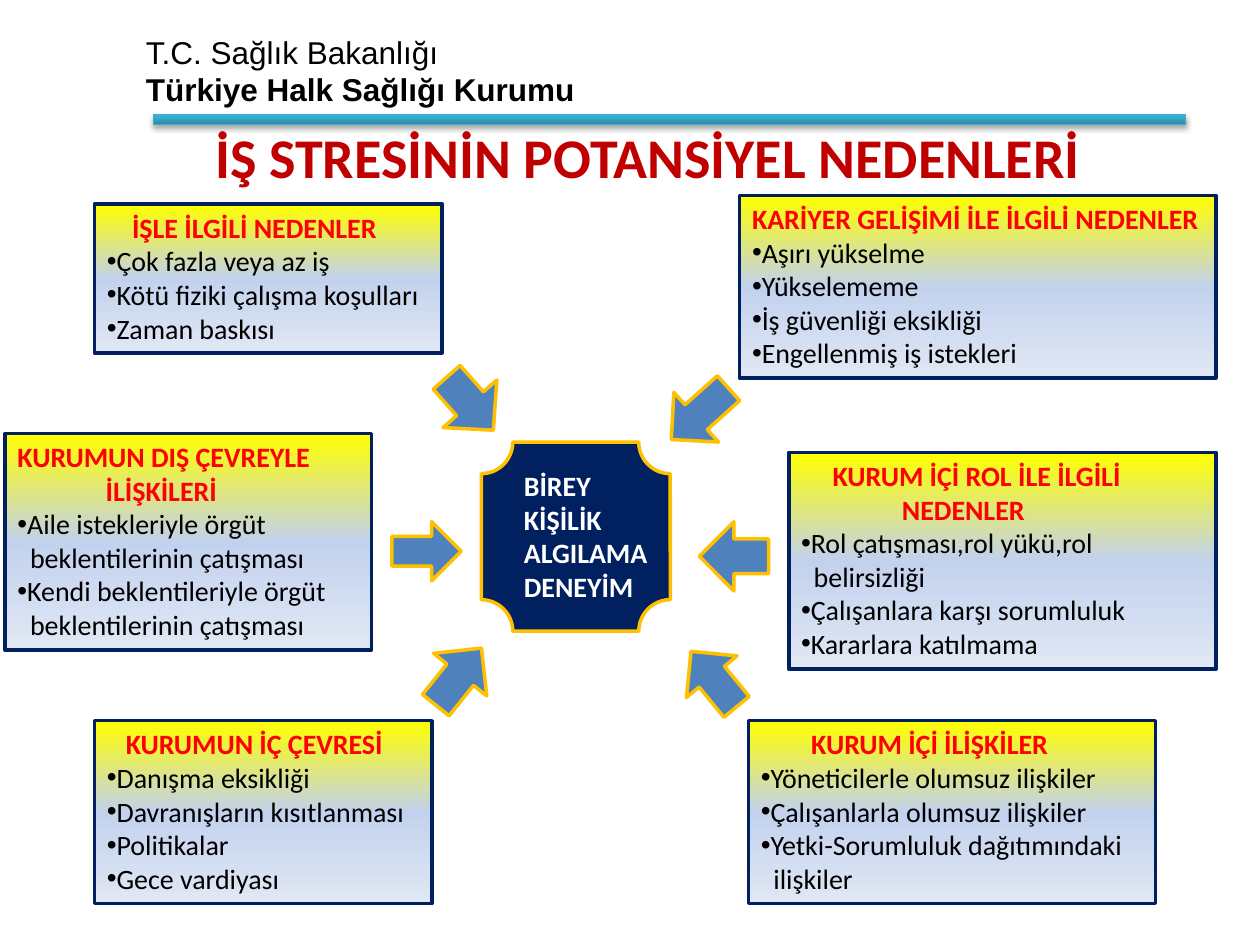
from lxml import etree
from pptx import Presentation
from pptx import util as u
from pptx.dml import color
from pptx.enum import shapes, text
from pptx.oxml import ns

NAVY, GOLD, RED, BLACK = "002060", "FFC000", "FF0000", "000000"
PANEL_STOPS = [(0, "FFFF00"), (50, "C2D1ED"), (100, "E1E8F5")]
BAR_STOPS = [(0, "2A88A2"), (80, "37B1D2"), (100, "34B4D6")]
LINE_HEIGHT, PADDING, SPACE = 0.27, 0.1, 0.05

# Each panel: left, top, width, headings (indent in spaces, text), causes (wrapped lines).
PANELS = [
    (0.75, 1.62, 2.76, [(4, "İŞLE İLGİLİ NEDENLER")],
     [["Çok fazla veya az iş"], ["Kötü fiziki çalışma koşulları"], ["Zaman baskısı"]]),
    (0.04, 3.44, 2.91, [(0, "KURUMUN DIŞ ÇEVREYLE"), (14, "İLİŞKİLERİ")],
     [["Aile istekleriyle örgüt", "beklentilerinin çatışması"],
      ["Kendi beklentileriyle örgüt", "beklentilerinin çatışması"]]),
    (0.75, 5.72, 2.68, [(3, "KURUMUN İÇ ÇEVRESİ")],
     [["Danışma eksikliği"], ["Davranışların kısıtlanması"], ["Politikalar"], ["Gece vardiyası"]]),
    (5.94, 5.72, 3.23, [(8, "KURUM İÇİ İLİŞKİLER")],
     [["Yöneticilerle olumsuz ilişkiler"], ["Çalışanlarla olumsuz ilişkiler"],
      ["Yetki-Sorumluluk dağıtımındaki", "ilişkiler"]]),
    (5.87, 1.55, 3.78, [(0, "KARİYER GELİŞİMİ İLE İLGİLİ NEDENLER")],
     [["Aşırı yükselme"], ["Yükselememe"], ["İş güvenliği eksikliği"],
      ["Engellenmiş iş istekleri"]]),
    (6.26, 3.59, 3.39, [(5, "KURUM İÇİ ROL İLE İLGİLİ"), (16, "NEDENLER")],
     [["Rol çatışması,rol yükü,rol", "belirsizliği"], ["Çalışanlara karşı sorumluluk"],
      ["Kararlara katılmama"]]),
]
ARROWS = [
    ("RIGHT_ARROW", (3.45, 2.92, 0.56, 0.57), 48.5),
    ("DOWN_ARROW", (3.15, 4.1, 0.47, 0.55), 270),
    ("LEFT_ARROW", (5.38, 5.13, 0.57, 0.52), 50.6),
    ("RIGHT_ARROW", (3.35, 5.1, 0.58, 0.54), 308.7),
    ("LEFT_ARROW", (5.25, 3.02, 0.61, 0.53), 318.1),
    ("LEFT_ARROW", (5.55, 4.14, 0.55, 0.55), 0),
]


def rgb(value):
    """Turn a hex string into a colour."""
    return color.RGBColor.from_string(value)


def add_child(parent, tag, **attributes):
    """Append a drawing element and return it."""
    return etree.SubElement(parent, ns.qn(tag), {k: str(v) for k, v in attributes.items()})


def add_shape(page, kind, place, fill, line=GOLD, weight=2):
    """Add a preset shape with a solid or gradient fill."""
    shape = page.shapes.add_shape(getattr(shapes.MSO_SHAPE, kind), *map(u.Inches, place))
    shape.shadow.inherit = False
    shape.line.color.rgb = rgb(line)
    shape.line.width = u.Pt(weight)
    if isinstance(fill, str):
        shape.fill.solid()
        shape.fill.fore_color.rgb = rgb(fill)
        return shape
    shape.fill.gradient()
    stops = shape._element.spPr.find(".//" + ns.qn("a:gsLst"))
    for stop in list(stops):
        stops.remove(stop)
    for position, value in fill:
        stop = add_child(stops, "a:gs", pos=position * 1000)
        add_child(stop, "a:srgbClr", val=value)
    return shape


def write(para, wording, size, value, bold=True, font="Calibri", indent=0, bullet=False):
    """Fill one paragraph and set its font, indent and bullet."""
    para.text = wording
    para.alignment = text.PP_ALIGN.LEFT
    para.font.size, para.font.name, para.font.bold = u.Pt(size), font, bold
    para.font.color.rgb = rgb(value)
    properties = para._p.get_or_add_pPr()
    properties.set("marL", str(u.Inches(indent)))
    properties.set("indent", "0")
    if bullet:
        mark_font = etree.Element(ns.qn("a:buFont"), typeface="Arial")
        mark = etree.Element(ns.qn("a:buChar"), char="•")
        properties[:0] = [mark_font, mark]


def add_text(page, place, lines):
    """Add a text box with one paragraph per line of settings."""
    box = page.shapes.add_textbox(*map(u.Inches, place))
    fill_frame(box.text_frame, lines)


def fill_frame(frame, lines):
    """Write a list of paragraph settings into a text frame."""
    frame.word_wrap = True
    frame.vertical_anchor = text.MSO_ANCHOR.TOP
    for number, settings in enumerate(lines):
        para = frame.add_paragraph() if number else frame.paragraphs[0]
        write(para, **settings)


def add_panel(page, left, top, width, headings, causes):
    """Add a panel whose height follows its number of lines."""
    lines = [dict(wording=wording, size=16, value=RED, indent=spaces * SPACE)
             for spaces, wording in headings]
    for cause in causes:
        for number, wording in enumerate(cause):
            lines.append(dict(wording=wording, size=16, value=BLACK, bold=False,
                              indent=2 * SPACE if number else 0, bullet=number == 0))
    place = (left, top, width, PADDING + LINE_HEIGHT * len(lines))
    panel = add_shape(page, "RECTANGLE", place, PANEL_STOPS, NAVY)
    panel.fill.gradient_angle = 270
    fill_frame(panel.text_frame, lines)


def add_bar(page):
    """Add the header bar with its soft shadow."""
    bar = add_shape(page, "RECTANGLE", (1.22, 0.91, 8.19, 0.08), BAR_STOPS, "46AAC5", 0.75)
    bar.fill.gradient_angle = 90
    effects = bar._element.spPr.find(ns.qn("a:effectLst"))
    shadow = add_child(effects, "a:outerShdw", blurRad=u.Pt(3.1), dist=u.Pt(1.8),
                       dir=5400000, rotWithShape=0)
    add_child(add_child(shadow, "a:srgbClr", val=BLACK), "a:alpha", val=35000)


def main():
    """Build the slide on the causes of work stress."""
    deck = Presentation()
    deck.slide_width, deck.slide_height = u.Inches(10), u.Inches(7.5)
    page = deck.slides.add_slide(deck.slide_layouts[6])
    add_text(page, (1.06, 0.21, 6.85, 0.71), [
        dict(wording="T.C. Sağlık Bakanlığı", size=18, value=BLACK, bold=False, font="Arial"),
        dict(wording="Türkiye Halk Sağlığı Kurumu", size=18, value=BLACK, font="Arial")])
    add_bar(page)
    add_shape(page, "PLAQUE", (3.82, 3.51, 1.5, 1.5), NAVY)
    for panel in PANELS:
        add_panel(page, *panel)
    add_text(page, (4.06, 3.67, 1.26, 1.18), [
        dict(wording="BİREY\nKİŞİLİK\nALGILAMA\nDENEYİM", size=16, value="FFFFFF")])
    add_text(page, (1.61, 0.92, 8.03, 0.64), [
        dict(wording="İŞ STRESİNİN POTANSİYEL NEDENLERİ", size=32, value="C00000")])
    for kind, place, turn in ARROWS:
        add_shape(page, kind, place, "4F81BD").rotation = turn
    deck.save("out.pptx")


if __name__ == "__main__":
    main()
